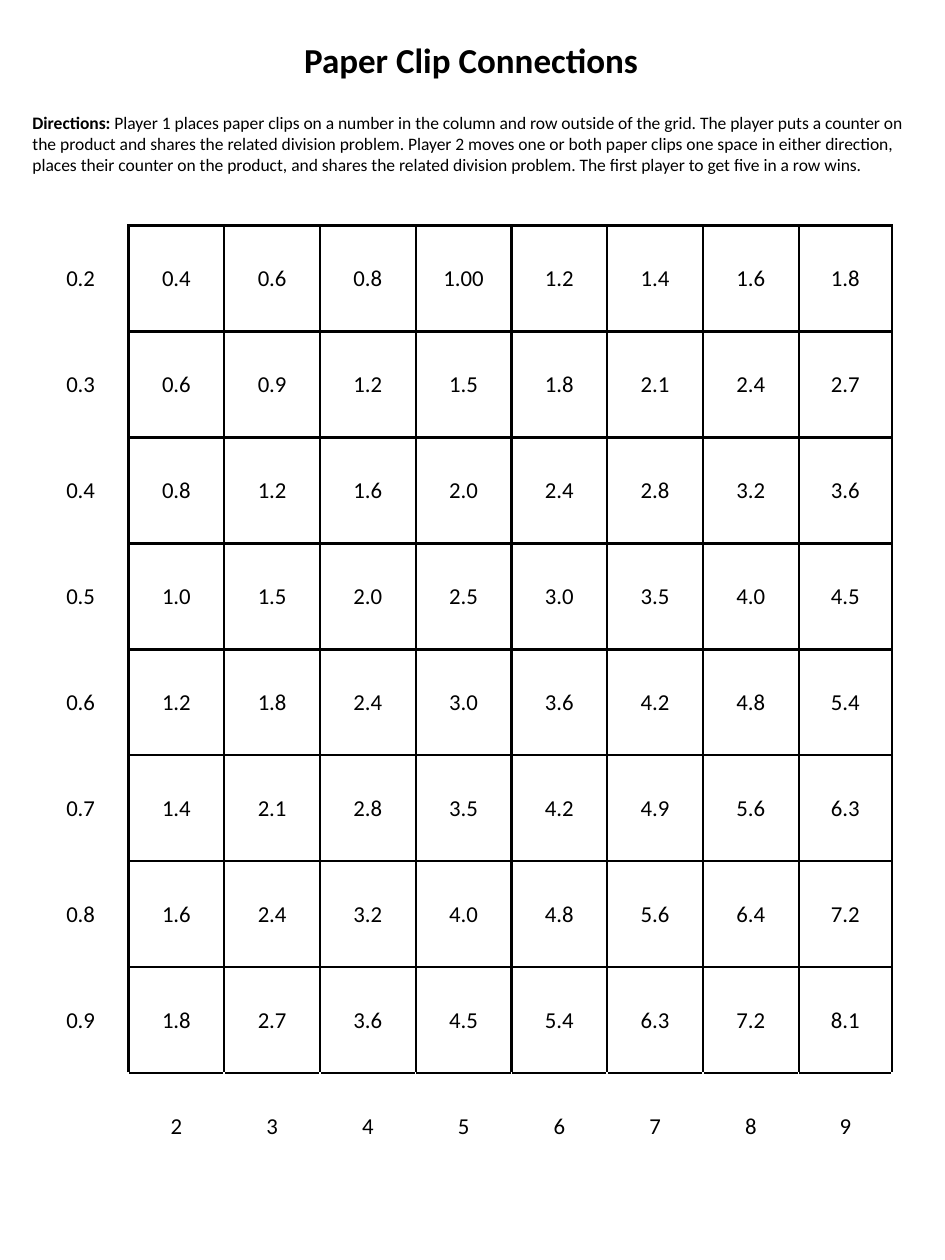
from dataclasses import dataclass

from lxml.etree import SubElement
from pptx import Presentation
from pptx.dml.color import RGBColor
from pptx.enum.shapes import MSO_SHAPE as Shape
from pptx.enum.text import MSO_ANCHOR as Anchor, PP_ALIGN as Align
from pptx.oxml.ns import qn
from pptx.util import Inches, Pt


@dataclass(frozen=True)
class Theme:
    font: str = "Calibri"
    ink: str = "000000"
    paper: str = "FFFFFF"
    title_size: float = 20
    body_size: float = 10
    number_size: float = 13
    grid_width: float = 1.5
    hidden_width: float = 1


class Board:
    """Draws a game board on one slide in a single theme."""

    def __init__(self, page, theme):
        self.page, self.theme = page, theme

    def style(self, para, size, align, bold=None):
        para.alignment = align
        font = para.font
        font.name, font.size, font.bold = self.theme.font, Pt(size), bold
        font.color.rgb = RGBColor.from_string(self.theme.ink)

    def paint(self, fill):
        fill.solid()
        fill.fore_color.rgb = RGBColor.from_string(self.theme.paper)

    def banner(self, top, spans, size, align):
        box = self.page.shapes.add_shape(
            Shape.RECTANGLE, Inches(0.16), Inches(top), Inches(7.16), Inches(0.62))
        box.shadow.inherit = False
        self.paint(box.fill)
        self.paint(box.line.fill)
        box.line.width = Pt(self.theme.hidden_width)
        frame = box.text_frame
        frame.word_wrap, frame.vertical_anchor = True, Anchor.MIDDLE
        para = frame.paragraphs[0]
        self.style(para, size, align)
        for words, bold in spans:
            span = para.add_run()
            span.text, span.font.bold = words, bold

    def border(self, cell, side, visible):
        theme = self.theme
        width = theme.grid_width if visible else theme.hidden_width
        line = SubElement(cell._tc.get_or_add_tcPr(), qn(f"a:ln{side}"), w=str(Pt(width)))
        color = theme.ink if visible else theme.paper
        SubElement(SubElement(line, qn("a:solidFill")), qn("a:srgbClr"), val=color)

    def cell(self, cell, text, visible_sides):
        cell.margin_left = cell.margin_right = Inches(0.06)
        cell.margin_top = cell.margin_bottom = 0
        cell.vertical_anchor = Anchor.MIDDLE
        for side in "LRTB":
            self.border(cell, side, side in visible_sides)
        self.paint(cell.fill)
        cell.text = text
        self.style(cell.text_frame.paragraphs[0], self.theme.number_size, Align.CENTER)

    def grid(self, rows):
        count, last = len(rows), len(rows) - 1
        table = self.page.shapes.add_table(
            count, count, Inches(0.26), Inches(1.79), Inches(6.85), Inches(7.57)).table
        table.first_row = table.horz_banding = False
        for index in range(count):
            table.columns[index].width = Inches(0.74 if index == last else 0.76)
            table.rows[index].height = Inches(7.57 / count)
        for r, row in enumerate(rows):
            for c, text in enumerate(row):
                if r == last:
                    sides = "T" if c else ""
                else:
                    sides = "LRTB" if c else "R"
                self.cell(table.cell(r, c), text, sides)


def products():
    factors = range(2, 10)
    rows = [[f"{n / 10:.1f}"] + [f"{n * m / 10:.1f}" for m in factors] for n in factors]
    rows[0][4] = "1.00"
    return rows + [[""] + [str(m) for m in factors]]


def main():
    deck = Presentation()
    deck.slide_width, deck.slide_height = Inches(7.5), Inches(10)
    theme = Theme()
    board = Board(deck.slides.add_slide(deck.slide_layouts[6]), theme)
    board.banner(0.16, [("Paper Clip Connections", True)], theme.title_size, Align.CENTER)
    directions = (
        " Player 1 places paper clips on a number in the column and row outside of the grid. "
        "The player puts a counter on the product and shares the related division problem. "
        "Player 2 moves one or both paper clips one space in either direction, "
        "places their counter on the product, and shares the related division problem. "
        "The first player to get five in a row wins.")
    board.banner(0.83, [("Directions:", True), (directions, False)],
                 theme.body_size, Align.LEFT)
    board.grid(products())
    deck.save("out.pptx")


if __name__ == "__main__":
    main()
